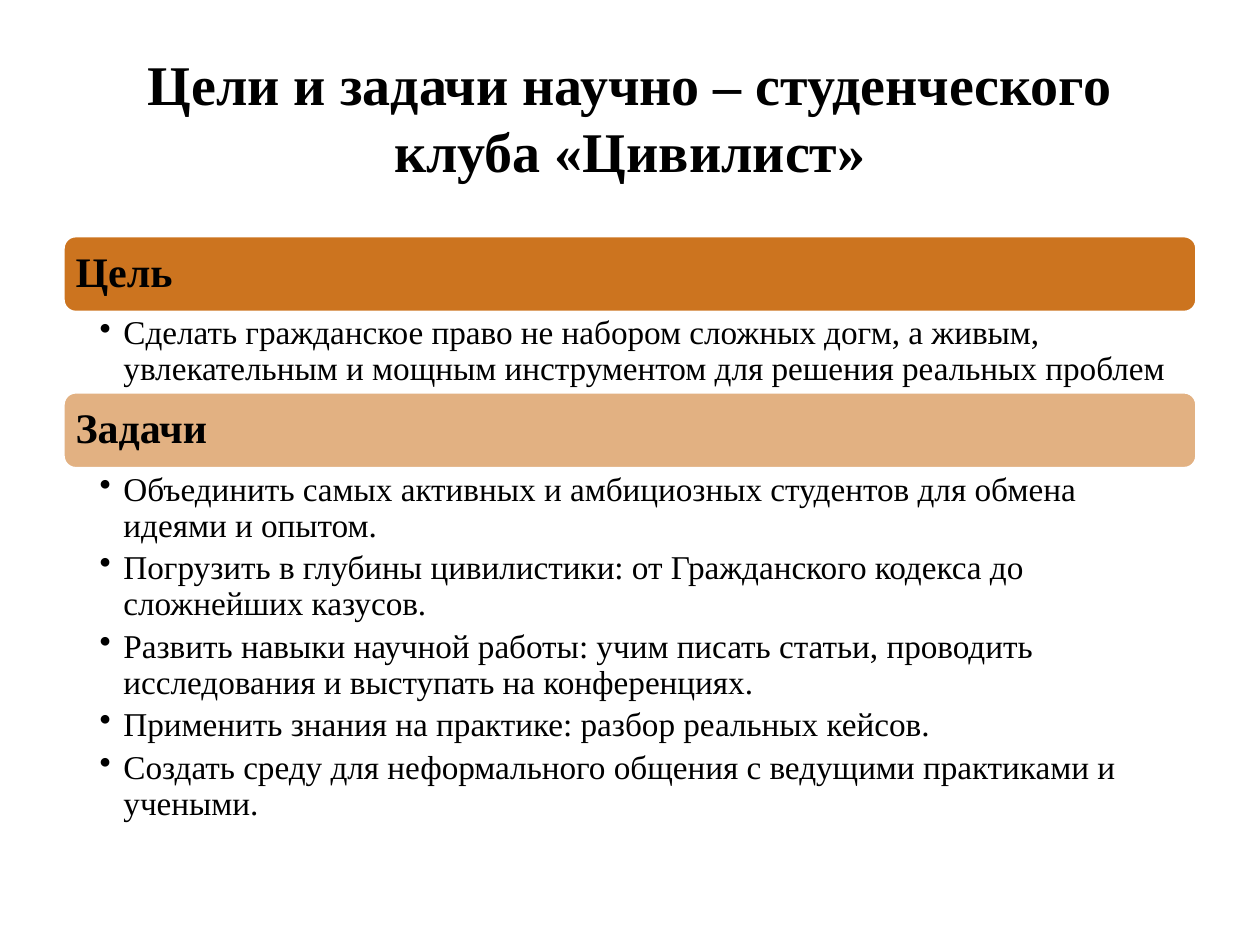
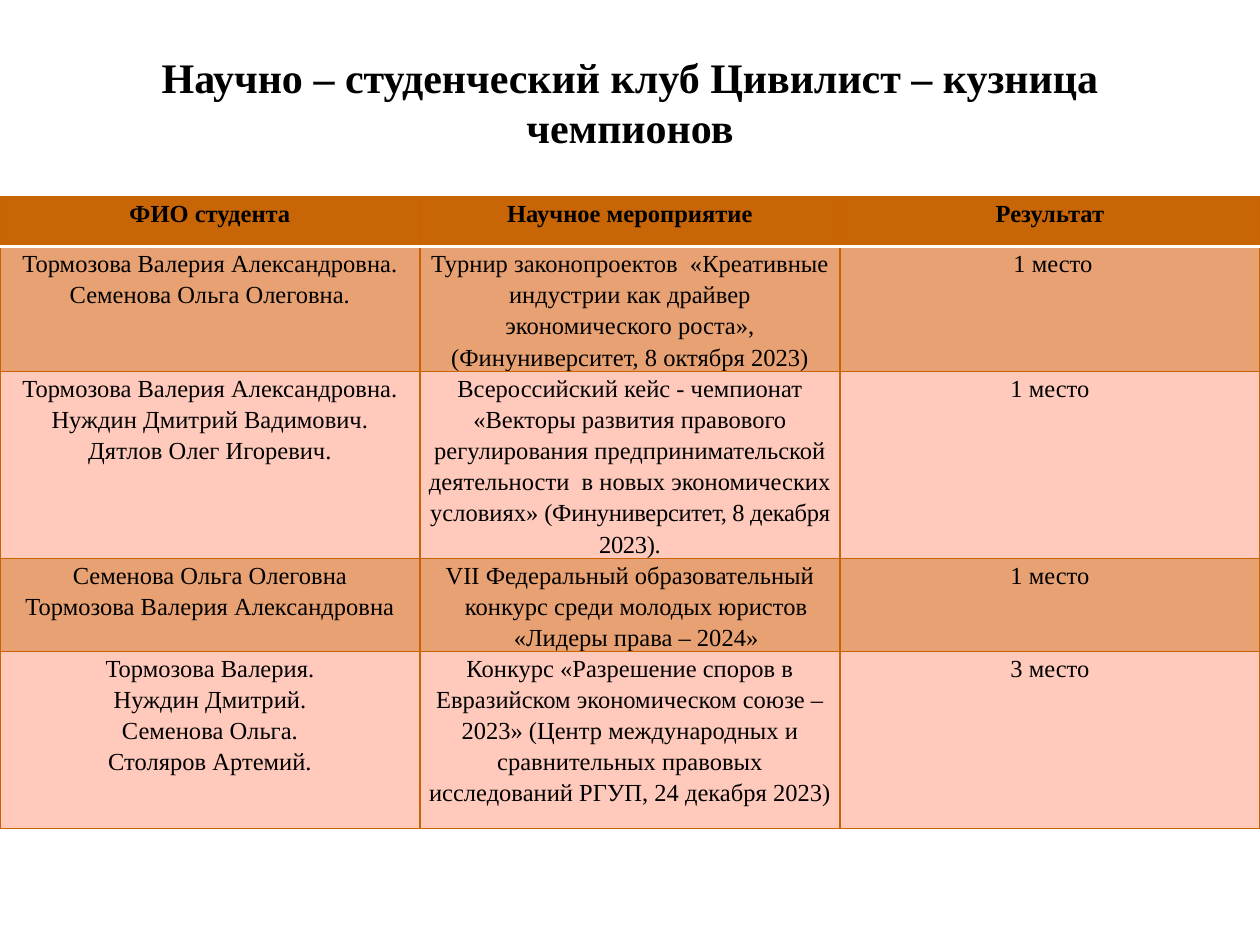
from lxml import etree
from pptx import Presentation
from pptx.dml.color import RGBColor
from pptx.enum import shapes, text
from pptx.oxml import ns
from pptx.util import Inches, Pt

FONT = "Times New Roman"
BLACK = RGBColor(0x00, 0x00, 0x00)
WHITE = RGBColor(0xFF, 0xFF, 0xFF)
ORANGE = RGBColor(0xC7, 0x65, 0x07)
BORDER = RGBColor(0xC7, 0x63, 0x02)
TAN = RGBColor(0xE8, 0xA1, 0x73)
PINK = RGBColor(0xFF, 0xCA, 0xBC)

deck = Presentation()
deck.slide_width, deck.slide_height = Inches(10), Inches(7.5)


def style(para, size, bold=False):
    para.font.name = FONT
    para.font.size = Pt(size)
    para.font.bold = bold
    para.font.color.rgb = BLACK


def add_titled_page(heading, top, size):
    page = deck.slides.add_slide(deck.slide_layouts[5])
    title = page.shapes.title
    title.left, title.top = Inches(0.5), Inches(top)
    title.width, title.height = Inches(9), Inches(1.25)
    title.text_frame.text = heading
    title.text_frame.auto_size = text.MSO_AUTO_SIZE.NONE
    title.text_frame.vertical_anchor = text.MSO_ANCHOR.MIDDLE
    para = title.text_frame.paragraphs[0]
    para.alignment = text.PP_ALIGN.CENTER
    style(para, size, bold=True)
    return page


# Goals and tasks
page = add_titled_page("Цели и задачи научно – студенческого клуба «Цивилист»", 0.3, 32)

# heading, band opacity in percent, list height, list items
sections = [
    ("Цель", 90, 0.63, [
        "Сделать гражданское право не набором сложных догм, а живым, "
        "увлекательным и мощным инструментом для решения реальных проблем",
    ]),
    ("Задачи", 50, 2.77, [
        "Объединить самых активных и амбициозных студентов для обмена идеями и опытом.",
        "Погрузить в глубины цивилистики: от Гражданского кодекса до сложнейших казусов.",
        "Развить навыки научной работы: учим писать статьи, проводить исследования "
        "и выступать на конференциях.",
        "Применить знания на практике: разбор реальных кейсов.",
        "Создать среду для неформального общения с ведущими практиками и учеными.",
    ]),
]
band_height = 0.61
top = 1.87
for heading, opacity, list_height, items in sections:
    band = page.shapes.add_shape(shapes.MSO_SHAPE.ROUNDED_RECTANGLE, Inches(0.5),
                                 Inches(top), Inches(9), Inches(band_height))
    band.shadow.inherit = False
    band.fill.solid()
    band.fill.fore_color.rgb = ORANGE
    color = band.fill._xPr.find(".//" + ns.qn("a:srgbClr"))
    etree.SubElement(color, ns.qn("a:alpha"), val=str(opacity * 1000))
    band.line.color.rgb = WHITE
    band.line.width = Pt(2)
    frame = band.text_frame
    frame.margin_left = Inches(0.07)
    frame.vertical_anchor = text.MSO_ANCHOR.MIDDLE
    frame.text = heading
    para = frame.paragraphs[0]
    para.alignment = text.PP_ALIGN.LEFT
    para.line_spacing = 0.9
    style(para, 24, bold=True)
    top += band_height

    box = page.shapes.add_textbox(Inches(0.5), Inches(top), Inches(9), Inches(list_height))
    frame = box.text_frame
    frame.word_wrap = True
    frame.margin_left, frame.margin_right = Inches(0.29), Inches(0.19)
    frame.margin_top = frame.margin_bottom = Inches(0.03)
    frame.text = "\n".join(items)
    for para in frame.paragraphs:
        properties = para._p.get_or_add_pPr()
        properties.set("marL", str(Inches(0.19)))
        properties.set("indent", str(-Inches(0.19)))
        etree.SubElement(properties, ns.qn("a:buChar"), char="•")
        para.line_spacing = 0.9
        para.space_after = Pt(3.8)
        style(para, 19)
    top += list_height

# Champions table
page = add_titled_page("Научно – студенческий клуб Цивилист – кузница чемпионов", 0.18, 24)

results = [
    ("ФИО студента", "Научное мероприятие", "Результат"),
    ("Тормозова Валерия Александровна.\nСеменова Ольга Олеговна.",
     "Турнир законопроектов  «Креативные индустрии как драйвер экономического роста», "
     "(Финуниверситет, 8 октября 2023)",
     " 1 место"),
    ("Тормозова Валерия Александровна.\nНуждин Дмитрий Вадимович.\nДятлов Олег Игоревич.",
     "Всероссийский кейс - чемпионат «Векторы развития правового регулирования "
     "предпринимательской деятельности  в новых экономических условиях»",
     "1 место"),
    ("Семенова Ольга Олеговна\nТормозова Валерия Александровна",
     "VII Федеральный образовательный конкурс среди молодых юристов «Лидеры права – 2024»",
     "1 место"),
    ("Тормозова Валерия.\nНуждин Дмитрий.\nСеменова Ольга.\nСтоляров Артемий.",
     "Конкурс «Разрешение споров в Евразийском экономическом союзе – 2023» "
     "(Центр международных и сравнительных правовых исследований РГУП, 24 декабря 2023)",
     "3 место"),
]
row_heights = [0.4, 0.99, 1.48, 0.74, 1.4]
table = page.shapes.add_table(len(results), 3, 0, Inches(1.56), Inches(10),
                              Inches(sum(row_heights))).table
table.first_row = table.horz_banding = False

for r, (values, height) in enumerate(zip(results, row_heights)):
    table.rows[r].height = Inches(height)
    for c, value in enumerate(values):
        cell = table.cell(r, c)
        cell.text = value
        cell.margin_left = cell.margin_right = Inches(0.04)
        cell.margin_top = cell.margin_bottom = 0
        for edge in ("lnL", "lnR", "lnT", "lnB"):
            under_header = (r, edge) in ((0, "lnB"), (1, "lnT"))
            line = etree.SubElement(cell._tc.get_or_add_tcPr(), ns.qn("a:" + edge),
                                    w=str(Pt(2 if under_header else 0.75)))
            fill = etree.SubElement(line, ns.qn("a:solidFill"))
            etree.SubElement(fill, ns.qn("a:srgbClr"),
                             val=str(WHITE if under_header else BORDER))
        cell.fill.solid()
        cell.fill.fore_color.rgb = ORANGE if r == 0 else TAN if r % 2 else PINK
        for para in cell.text_frame.paragraphs:
            para.alignment = text.PP_ALIGN.CENTER
            para.line_spacing = 1.15
            style(para, 14, bold=r == 0)

venue = table.cell(2, 1).text_frame.paragraphs[0].add_run()
venue.text = " (Финуниверситет, 8 декабря 2023)."
venue._r.get_or_add_rPr().set("spc", "-20")

contest = table.cell(3, 1).text_frame.paragraphs[0]._p.get_or_add_pPr()
contest.set("marL", str(Inches(0.1)))
contest.set("indent", str(-Inches(0.1)))

deck.save("out.pptx")
